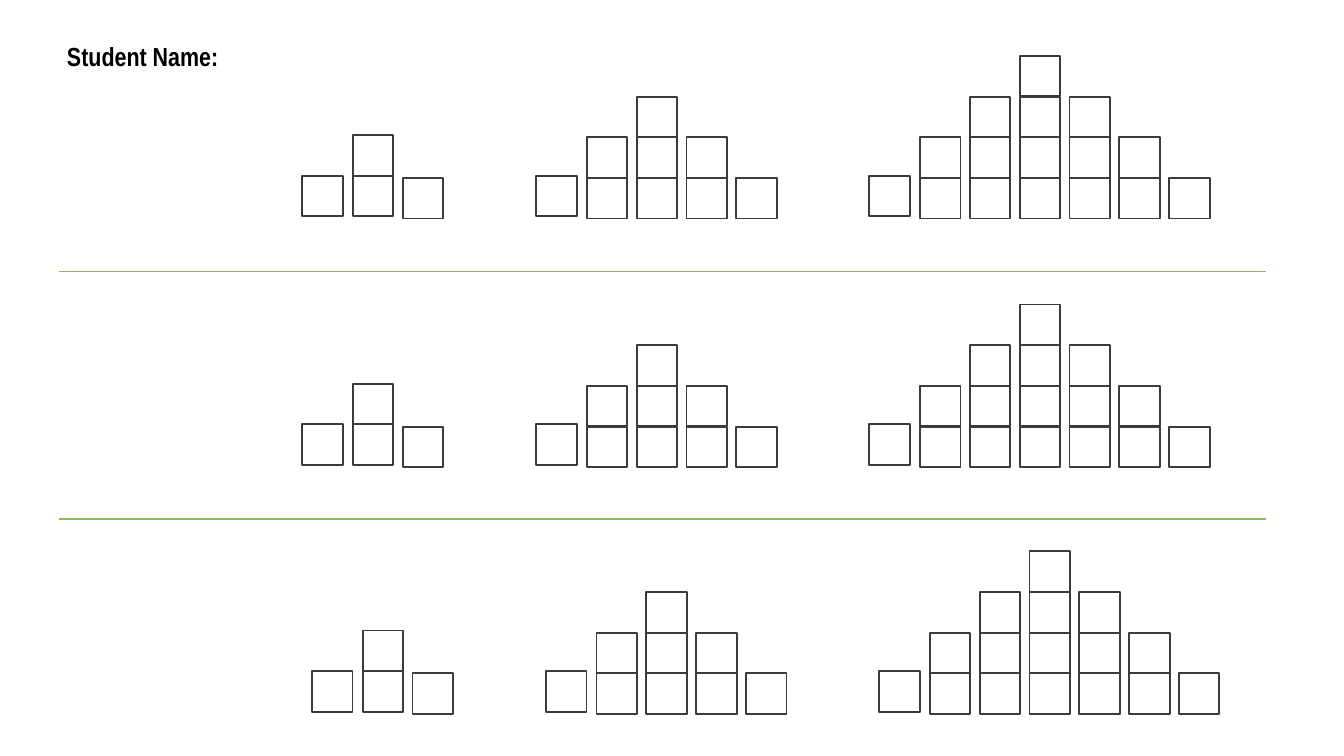
from dataclasses import dataclass

from lxml import etree
from pptx import Presentation
from pptx.dml.color import RGBColor
from pptx.enum import shapes, text
from pptx.oxml import ns
from pptx.util import Pt


@dataclass(frozen=True)
class Theme:
    paper: RGBColor = RGBColor.from_string("FFFFFF")
    outline: RGBColor = RGBColor.from_string("3B3B3B")
    divider: RGBColor = RGBColor.from_string("88C245")
    ink: RGBColor = RGBColor.from_string("000000")
    font: str = "Arial Narrow"
    label_size: float = 14
    outline_width: float = 1
    divider_width: float = 0.75


@dataclass(frozen=True)
class Box:
    left: float
    top: float
    width: float
    height: float


@dataclass(frozen=True)
class Pyramid:
    offset: float
    peak: int
    raised_columns: int


THEME = Theme()
CELL = 21.7
STEP = 21.8
PITCH = 26.7
FIRST_GAP = 0.4
RAISE = 1.2
PYRAMIDS = (Pyramid(0, 2, 2), Pyramid(125.3, 3, 1), Pyramid(303.8, 4, 1))
ROWS = (
    Box(162, 30, 486, 87.2),
    Box(162, 163.2, 486, 87.2),
    Box(167.2, 295.4, 486, 87.2),
)
DIVIDER_TOPS = (145.4, 278.1)


def add_square(page, left, top):
    square = page.shapes.add_shape(
        shapes.MSO_SHAPE.RECTANGLE, Pt(left), Pt(top), Pt(CELL), Pt(CELL)
    )
    square.shadow.inherit = False
    square.fill.solid()
    square.fill.fore_color.rgb = THEME.paper
    square.line.color.rgb = THEME.outline
    square.line.width = Pt(THEME.outline_width)


def add_pyramid(page, box, pyramid):
    for column in range(2 * pyramid.peak - 1):
        height = pyramid.peak - abs(column - pyramid.peak + 1)
        left = box.left + column * PITCH + (FIRST_GAP if column else 0)
        bottom = box.top + box.height
        if column < pyramid.raised_columns:
            bottom -= RAISE
        for level in range(height, 0, -1):
            add_square(page, left, bottom - level * STEP)


def add_pyramid_row(page, box):
    for pyramid in PYRAMIDS:
        width = (2 * pyramid.peak - 2) * PITCH + FIRST_GAP + CELL
        area = Box(box.left + pyramid.offset, box.top, width, box.height)
        add_pyramid(page, area, pyramid)


def add_divider(page, box):
    divider = page.shapes.add_connector(
        shapes.MSO_CONNECTOR.STRAIGHT,
        Pt(box.left), Pt(box.top), Pt(box.left + box.width), Pt(box.top),
    )
    divider.line.color.rgb = THEME.divider
    divider.line.width = Pt(THEME.divider_width)
    etree.SubElement(divider.element.spPr, ns.qn("a:effectLst"))


def add_name_label(page, box):
    label = page.shapes.add_textbox(
        Pt(box.left), Pt(box.top), Pt(box.width), Pt(box.height)
    )
    frame = label.text_frame
    frame.word_wrap = True
    frame.auto_size = text.MSO_AUTO_SIZE.SHAPE_TO_FIT_TEXT
    span = frame.paragraphs[0].add_run()
    span.text = "Student Name:"
    span.font.name = THEME.font
    span.font.size = Pt(THEME.label_size)
    span.font.bold = True
    span.font.color.rgb = THEME.ink


def main():
    deck = Presentation()
    deck.slide_width, deck.slide_height = Pt(720), Pt(405)
    page = deck.slides.add_slide(deck.slide_layouts.get_by_name("Blank"))
    for row in ROWS:
        add_pyramid_row(page, row)
    for top in DIVIDER_TOPS:
        add_divider(page, Box(31.7, top, 646.6, 0))
    add_name_label(page, Box(28.8, 18, 121, 24.5))
    deck.save("out.pptx")


if __name__ == "__main__":
    main()
